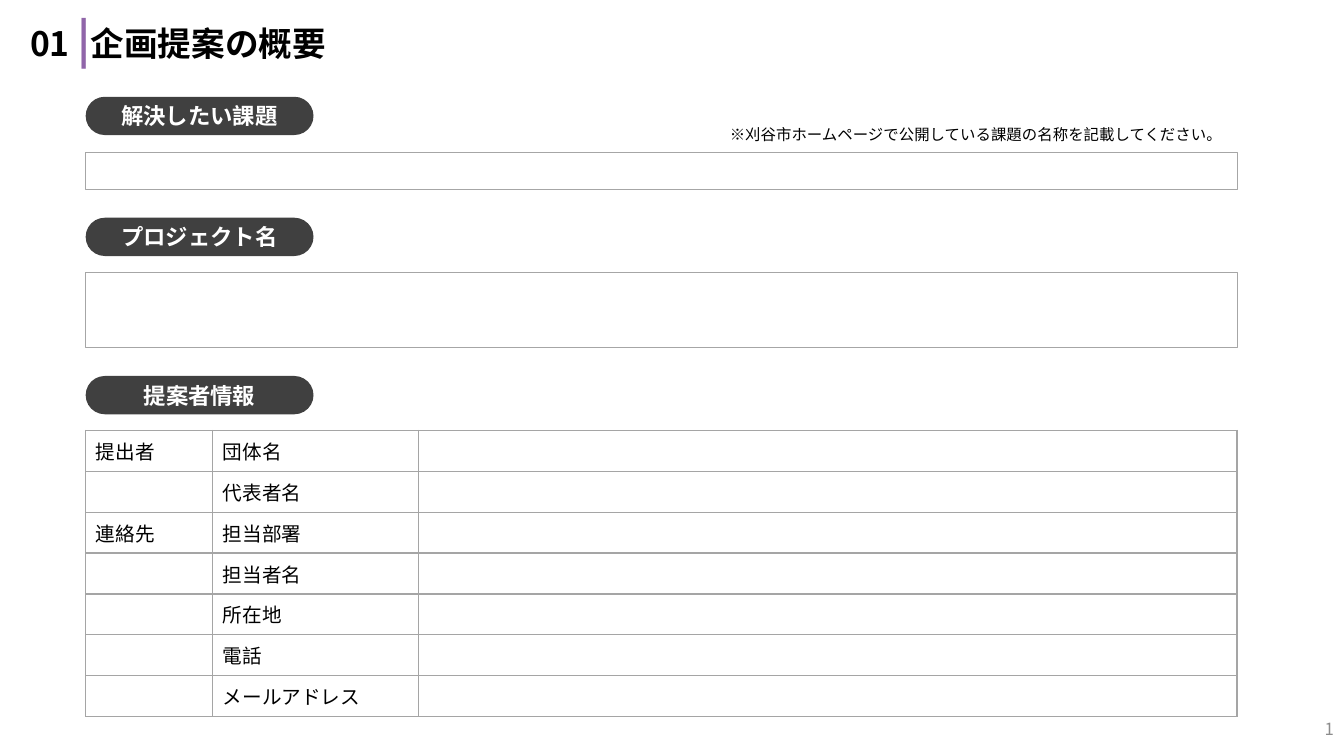
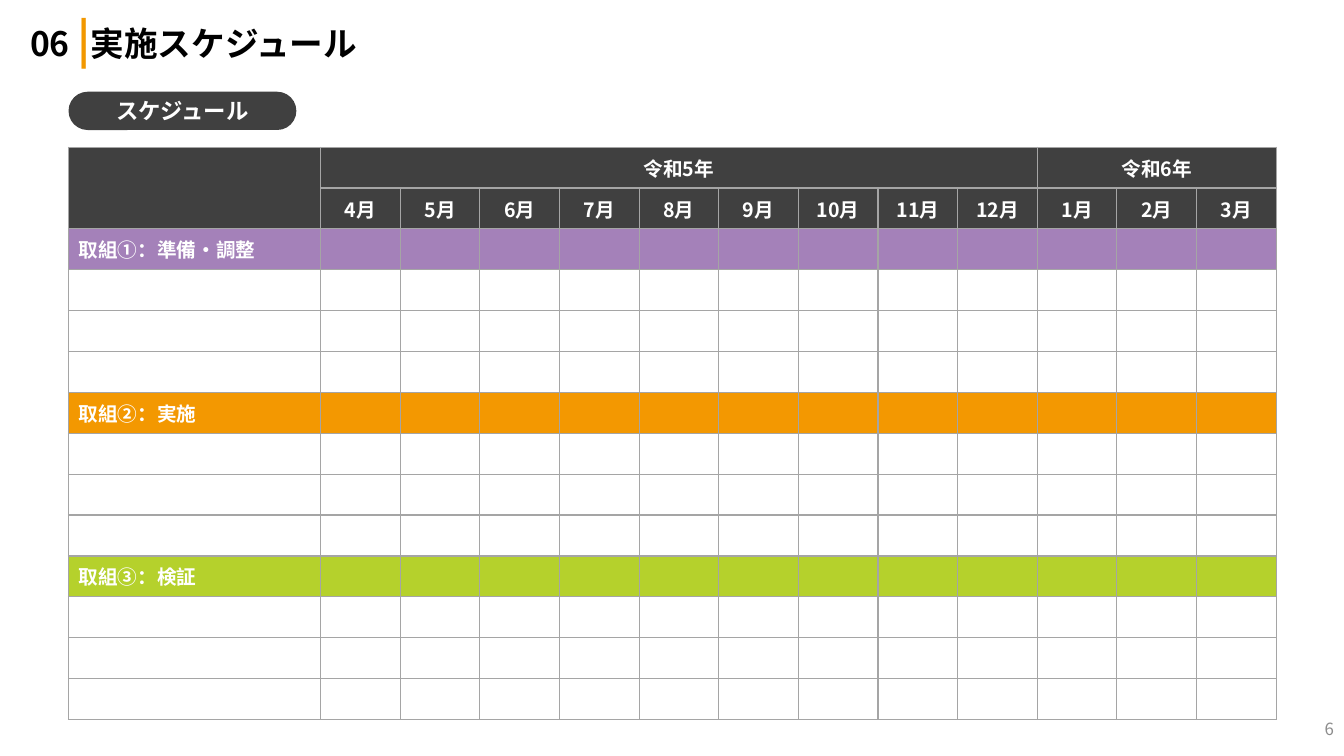
from dataclasses import dataclass
from typing import NamedTuple

from lxml import etree
from pptx import Presentation
from pptx.dml.color import RGBColor
from pptx.enum.shapes import MSO_SHAPE
from pptx.enum.text import MSO_ANCHOR, PP_ALIGN
from pptx.oxml.ns import qn
from pptx.util import Emu, Pt

ROUNDED = MSO_SHAPE.ROUNDED_RECTANGLE
RECTANGLE = MSO_SHAPE.RECTANGLE
TOP, MIDDLE = MSO_ANCHOR.TOP, MSO_ANCHOR.MIDDLE
LEFT, CENTER, RIGHT = PP_ALIGN.LEFT, PP_ALIGN.CENTER, PP_ALIGN.RIGHT

EMU_PER_PX = 9144


@dataclass(frozen=True)
class Theme:
    font: str = "Noto Sans CJK JP"
    ink: str = "000000"
    paper: str = "FFFFFF"
    dark: str = "404040"
    muted: str = "8C8C8C"
    frame: str = "A6A6A6"
    grid: str = "A5A5A5"
    purple: str = "9065A9"
    orange: str = "F29800"
    prepare_band: str = "A481B9"
    execute_band: str = "F39801"
    verify_band: str = "B5D12C"
    title_size: int = 24
    bar_size: int = 32
    heading_size: int = 16
    table_size: int = 14
    footer_size: int = 12
    note_size: int = 11
    frame_width: float = 0.75
    grid_width: float = 1


THEME = Theme()


class Box(NamedTuple):
    left: int
    top: int
    width: int
    height: int


class TextStyle(NamedTuple):
    size: int
    color: str
    bold: bool = False
    align: PP_ALIGN = LEFT


class Heading(NamedTuple):
    label: str
    left: int
    top: int


class Phase(NamedTuple):
    label: str
    color: str


class Year(NamedTuple):
    label: str
    months: range


TITLE_BOX = Box(20, 9, 1090, 66)
NUMBER_BOX = Box(1033, 711, 300, 25)
NOTE_BOX = Box(714, 116, 514, 32)
PILL_WIDTH, PILL_HEIGHT = 226, 38

TITLE = TextStyle(THEME.title_size, THEME.ink, True)
HEADING = TextStyle(THEME.heading_size, THEME.paper, True, CENTER)
NOTE = TextStyle(THEME.note_size, THEME.ink)
FOOTER = TextStyle(THEME.footer_size, THEME.muted, align=RIGHT)
ENTRY = TextStyle(THEME.table_size, THEME.ink)
PHASE = TextStyle(THEME.table_size, THEME.paper, True)
MONTH = PHASE._replace(align=CENTER)

OVERVIEW_LEFT, OVERVIEW_WIDTH = 85, 1142
OVERVIEW_HEADINGS = [
    Heading("解決したい課題", OVERVIEW_LEFT, 96),
    Heading("プロジェクト名", OVERVIEW_LEFT, 216),
    Heading("提案者情報", OVERVIEW_LEFT, 373),
]
ANSWER_BOXES = [
    Box(OVERVIEW_LEFT, 151, OVERVIEW_WIDTH, 37),
    Box(OVERVIEW_LEFT, 270, OVERVIEW_WIDTH, 75),
]
PROPOSER_ROWS = [
    ("提出者", "団体名"),
    ("", "代表者名"),
    ("連絡先", "担当部署"),
    ("", "担当者名"),
    ("", "所在地"),
    ("", "電話"),
    ("", "メールアドレス"),
]
PROPOSER_COLUMNS = [126, 204, 812]

YEARS = [Year("令和5年", range(4, 13)), Year("令和6年", range(1, 4))]
PHASES = [
    Phase("取組①：準備・調整", THEME.prepare_band),
    Phase("取組➁：実施", THEME.execute_band),
    Phase("取組③：検証", THEME.verify_band),
]
HEADER_ROWS = 2
ROWS_PER_PHASE = 4
MONTH_COUNT = sum(len(year.months) for year in YEARS)
SCHEDULE_COLUMNS = [250] + [79] * MONTH_COUNT


def px(length: int) -> Emu:
    return Emu(length * EMU_PER_PX)


def place(box: Box) -> list[Emu]:
    return [px(length) for length in box]


def rgb(color: str) -> RGBColor:
    return RGBColor.from_string(color)


def style_paragraph(paragraph, style: TextStyle) -> None:
    paragraph.alignment = style.align
    font = paragraph.font
    font.size = Pt(style.size)
    font.bold = style.bold
    font.color.rgb = rgb(style.color)
    font.name = THEME.font
    defaults = paragraph._p.pPr.find(qn("a:defRPr"))
    etree.SubElement(defaults, qn("a:ea"), typeface=THEME.font)


def add_text(slide, box: Box, text: str, style: TextStyle, anchor: MSO_ANCHOR = MIDDLE):
    frame = slide.shapes.add_textbox(*place(box)).text_frame
    frame.word_wrap = True
    frame.vertical_anchor = anchor
    paragraph = frame.paragraphs[0]
    paragraph.text = text
    style_paragraph(paragraph, style)
    return paragraph


def add_title(slide, number: int, title: str, accent: str) -> None:
    paragraph = add_text(slide, TITLE_BOX, f"{number:02d} ", TITLE)
    paragraph.line_spacing = 0.9
    bar = paragraph.add_run()
    bar.text = "|"
    bar.font.size = Pt(THEME.bar_size)
    bar.font.color.rgb = rgb(accent)
    paragraph.add_run().text = title


def add_heading(slide, heading: Heading) -> None:
    box = Box(heading.left, heading.top, PILL_WIDTH, PILL_HEIGHT)
    pill = slide.shapes.add_shape(ROUNDED, *place(box))
    pill.adjustments[0] = 0.5
    pill.shadow.inherit = False
    pill.fill.solid()
    pill.fill.fore_color.rgb = rgb(THEME.dark)
    pill.line.fill.background()
    pill.text_frame.vertical_anchor = MIDDLE
    paragraph = pill.text_frame.paragraphs[0]
    paragraph.text = heading.label
    style_paragraph(paragraph, HEADING)


def add_answer_box(slide, box: Box) -> None:
    answer = slide.shapes.add_shape(RECTANGLE, *place(box))
    answer.shadow.inherit = False
    answer.fill.background()
    answer.line.color.rgb = rgb(THEME.frame)
    answer.line.width = Pt(THEME.frame_width)


def add_borders(cell) -> None:
    properties = cell._tc.get_or_add_tcPr()
    for position, side in enumerate(("a:lnL", "a:lnR", "a:lnT", "a:lnB")):
        border = etree.Element(qn(side), w=str(Pt(THEME.grid_width)))
        fill = etree.SubElement(border, qn("a:solidFill"))
        etree.SubElement(fill, qn("a:srgbClr"), val=THEME.grid)
        properties.insert(position, border)


def fill_cell(cell, color: str) -> None:
    cell.fill.solid()
    cell.fill.fore_color.rgb = rgb(color)


def write_cell(cell, text: str, style: TextStyle) -> None:
    paragraph = cell.text_frame.paragraphs[0]
    paragraph.text = text
    style_paragraph(paragraph, style)


def add_grid(slide, left: int, top: int, height: int, columns: list[int], row_count: int):
    box = Box(left, top, sum(columns), height)
    table = slide.shapes.add_table(row_count, len(columns), *place(box)).table
    table.first_row = False
    table.horz_banding = False
    for column, width in zip(table.columns, columns):
        column.width = px(width)
    for row in table.rows:
        row.height = Emu(px(height) // row_count)
    for cell in table.iter_cells():
        cell.vertical_anchor = MIDDLE
        cell.margin_top = cell.margin_bottom = 0
        fill_cell(cell, THEME.paper)
        add_borders(cell)
        etree.SubElement(
            cell.text_frame.paragraphs[0]._p,
            qn("a:endParaRPr"),
            sz=str(THEME.table_size * 100),
        )
    return table


def add_proposer_table(slide) -> None:
    table = add_grid(slide, OVERVIEW_LEFT, 427, 284, PROPOSER_COLUMNS, len(PROPOSER_ROWS))
    for row, labels in enumerate(PROPOSER_ROWS):
        for column, label in enumerate(labels):
            if label:
                write_cell(table.cell(row, column), label, ENTRY)


def add_schedule_table(slide) -> None:
    row_count = HEADER_ROWS + ROWS_PER_PHASE * len(PHASES)
    table = add_grid(slide, 68, 146, 568, SCHEDULE_COLUMNS, row_count)
    band_colors = {row: THEME.dark for row in range(HEADER_ROWS)}
    for index, phase in enumerate(PHASES):
        row = HEADER_ROWS + index * ROWS_PER_PHASE
        band_colors[row] = phase.color
        write_cell(table.cell(row, 0), phase.label, PHASE)
    for row, color in band_colors.items():
        for column in range(len(SCHEDULE_COLUMNS)):
            fill_cell(table.cell(row, column), color)

    table.cell(0, 0).merge(table.cell(1, 0))
    first = 1
    for year in YEARS:
        write_cell(table.cell(0, first), year.label, MONTH)
        for column, month in enumerate(year.months, first):
            write_cell(table.cell(1, column), f"{month}月", MONTH)
        last = first + len(year.months) - 1
        table.cell(0, first).merge(table.cell(0, last))
        first = last + 1


def add_page(deck, number: int, title: str, accent: str):
    slide = deck.slides.add_slide(deck.slide_layouts[6])
    add_title(slide, number, title, accent)
    add_text(slide, NUMBER_BOX, str(number), FOOTER)
    return slide


def build_overview(deck) -> None:
    slide = add_page(deck, 1, "企画提案の概要", THEME.purple)
    for heading in OVERVIEW_HEADINGS:
        add_heading(slide, heading)
    for box in ANSWER_BOXES:
        add_answer_box(slide, box)
    note = add_text(
        slide,
        NOTE_BOX,
        "※刈谷市ホームページで公開している課題の名称を記載してください。",
        NOTE,
        TOP,
    )
    note.line_spacing = 1.2
    note.space_after = Pt(6)
    add_proposer_table(slide)


def build_schedule(deck) -> None:
    slide = add_page(deck, 6, "実施スケジュール", THEME.orange)
    add_heading(slide, Heading("スケジュール", 68, 91))
    add_schedule_table(slide)


def main() -> None:
    deck = Presentation()
    deck.slide_width, deck.slide_height = px(1333), px(750)
    build_overview(deck)
    build_schedule(deck)
    deck.save("out.pptx")


if __name__ == "__main__":
    main()
